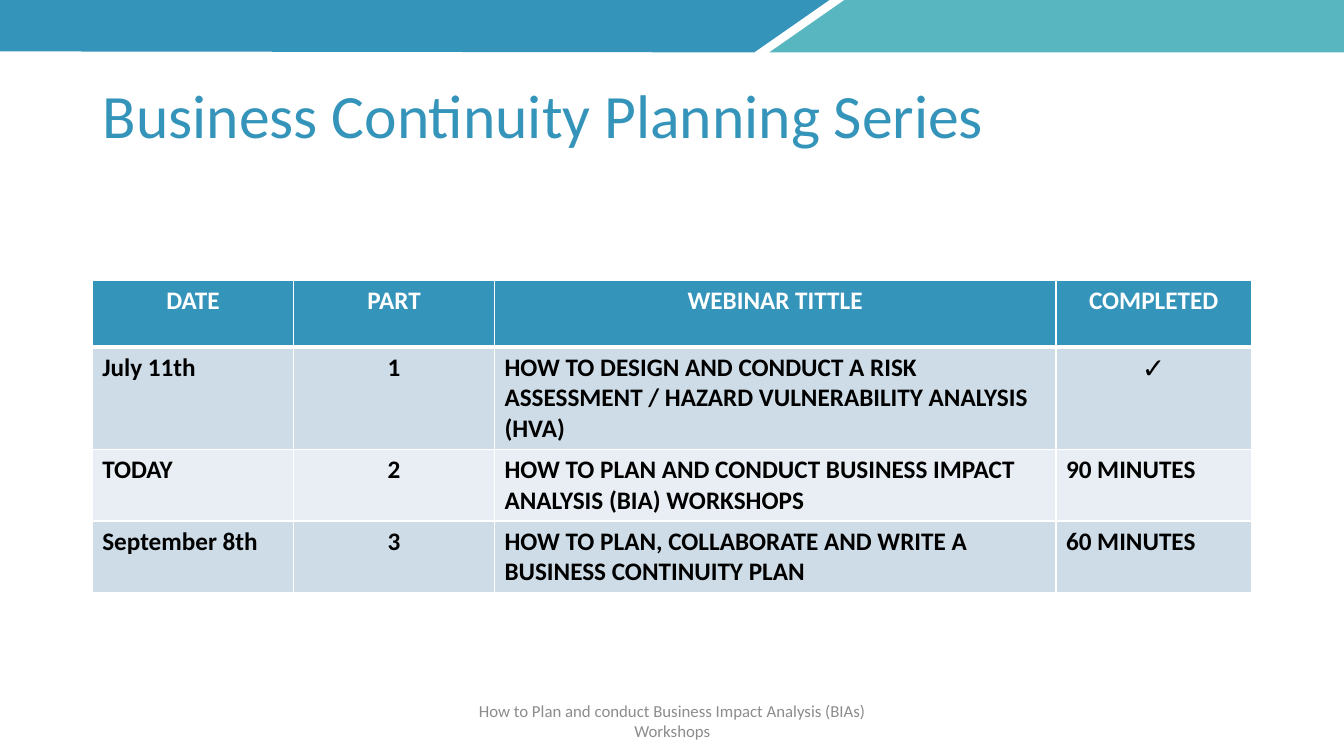
from lxml import etree
from pptx import Presentation
from pptx.dml.color import RGBColor
from pptx.enum.text import MSO_ANCHOR, MSO_AUTO_SIZE, PP_ALIGN
from pptx.oxml.ns import qn
from pptx.util import Inches, Pt

LEFT, CENTER = PP_ALIGN.LEFT, PP_ALIGN.CENTER
MIDDLE = MSO_ANCHOR.MIDDLE
FIXED = MSO_AUTO_SIZE.NONE
HUES = {"blue": "3494BA", "teal": "58B6C0", "white": "FFFFFF", "black": "000000",
        "gray": "8C8C8C", "dark": "CEDCE7", "light": "E8EEF3"}
FONT = "Calibri"
TITLE_ONLY = 5

BANDS = [
    ("blue", [(-0.15, -0.13), (61.82, -0.13), (56.12, 6.93), (0, 6.8)]),
    ("teal", [(62.94, -0.13), (100, 0), (100, 6.93), (57.24, 6.93)]),
]
COLS = [15, 14.93, 41.78, 14.55]
ROWS = [8.8, 13.55, 9.47, 9.47]
SERIES = [
    ["DATE", "PART", "WEBINAR TITTLE", "COMPLETED"],
    ["July 11th", "1", "HOW TO DESIGN AND CONDUCT A RISK ASSESSMENT / "
     "HAZARD VULNERABILITY ANALYSIS (HVA)", "✓"],
    ["TODAY", "2", "HOW TO PLAN AND CONDUCT BUSINESS IMPACT ANALYSIS (BIA) WORKSHOPS",
     "90 MINUTES"],
    ["September 8th", "3", "HOW TO PLAN, COLLABORATE AND WRITE A BUSINESS CONTINUITY PLAN",
     "60 MINUTES"],
]


def rgb(hue):
    """Return the named colour."""
    return RGBColor.from_string(HUES[hue])


def write(frame, text, size=18, hue="black", bold=False, align=LEFT, lead=None):
    """Put one formatted paragraph in a text frame."""
    para = frame.paragraphs[0]
    para.alignment = align
    para.line_spacing = lead
    run = para.add_run()
    run.text = text
    run.font.name = FONT
    run.font.size = Pt(size)
    run.font.bold = bold
    run.font.color.rgb = rgb(hue)


def edge(cell, side, width):
    """Draw one white border of a cell."""
    props = cell._tc.get_or_add_tcPr()
    line = etree.SubElement(props, qn("a:ln" + side), w=str(Pt(width)))
    fill = etree.SubElement(line, qn("a:solidFill"))
    etree.SubElement(fill, qn("a:srgbClr"), val=HUES["white"])


class Deck:
    """Hold the slide and place elements by percent of its size."""

    def __init__(self):
        """Open a wide deck with one title-only slide."""
        self.prs = Presentation()
        self.prs.slide_width = Inches(13.33)
        self.prs.slide_height = Inches(7.5)
        self.slide = self.prs.slides.add_slide(self.prs.slide_layouts[TITLE_ONLY])

    def wide(self, share):
        """Turn a percent of the width into a length."""
        return round(self.prs.slide_width * share / 100)

    def high(self, share):
        """Turn a percent of the height into a length."""
        return round(self.prs.slide_height * share / 100)

    def box(self, x, y, w, h):
        """Turn four percents into a place and size."""
        return self.wide(x), self.high(y), self.wide(w), self.high(h)

    def band(self, hue, points):
        """Draw a filled outline."""
        spots = [(self.wide(x), self.high(y)) for x, y in points]
        pen = self.slide.shapes.build_freeform(*spots[0])
        pen.add_line_segments(spots[1:], close=True)
        shape = pen.convert_to_shape()
        shape.shadow.inherit = False
        shape.fill.solid()
        shape.fill.fore_color.rgb = rgb(hue)
        shape.line.fill.background()

    def title(self, text, place):
        """Move and fill the title placeholder."""
        head = self.slide.shapes.title
        head.left, head.top, head.width, head.height = self.box(*place)
        self.frame(head, text, size=44, hue="blue", lead=0.9)

    def label(self, text, place, **style):
        """Add a text box."""
        self.frame(self.slide.shapes.add_textbox(*self.box(*place)), text, **style)

    def frame(self, shape, text, **style):
        """Set up a wrapped, middle-anchored frame and its text."""
        frame = shape.text_frame
        frame.word_wrap = True
        frame.auto_size = FIXED
        frame.vertical_anchor = MIDDLE
        write(frame, text, **style)

    def table(self, data, x, y, cols, rows):
        """Add the banded table."""
        place = self.box(x, y, sum(cols), sum(rows))
        table = self.slide.shapes.add_table(len(rows), len(cols), *place).table
        for col, share in zip(table.columns, cols):
            col.width = self.wide(share)
        for row, share in zip(table.rows, rows):
            row.height = self.high(share)
        for r, line in enumerate(data):
            for c, text in enumerate(line):
                self.cell(table.cell(r, c), text, r, c)

    def cell(self, cell, text, r, c):
        """Format one cell by its row and column."""
        head, tick = r == 0, text == "✓"
        for side in "LRTB":
            heavy = (r == 0 and side == "B") or (r == 1 and side == "T")
            edge(cell, side, 3 if heavy else 1)
        cell.fill.solid()
        cell.fill.fore_color.rgb = rgb("blue" if head else "dark" if r % 2 else "light")
        write(cell.text_frame, text, size=20 if tick else 18, bold=True,
              hue="white" if head else "black",
              align=CENTER if head or tick or c == 1 else LEFT)


def main():
    """Build and save the slide."""
    deck = Deck()
    for hue, points in BANDS:
        deck.band(hue, points)
    deck.title("Business Continuity Planning Series", (6.9, 6.8, 86.26, 17.73))
    deck.table(SERIES, 6.86, 37.1, COLS, ROWS)
    deck.label("How to Plan and conduct Business Impact Analysis (BIAs) Workshops",
               (33.15, 92.67, 33.75, 5.33), size=12, hue="gray", align=CENTER)
    deck.prs.save("out.pptx")


if __name__ == "__main__":
    main()
